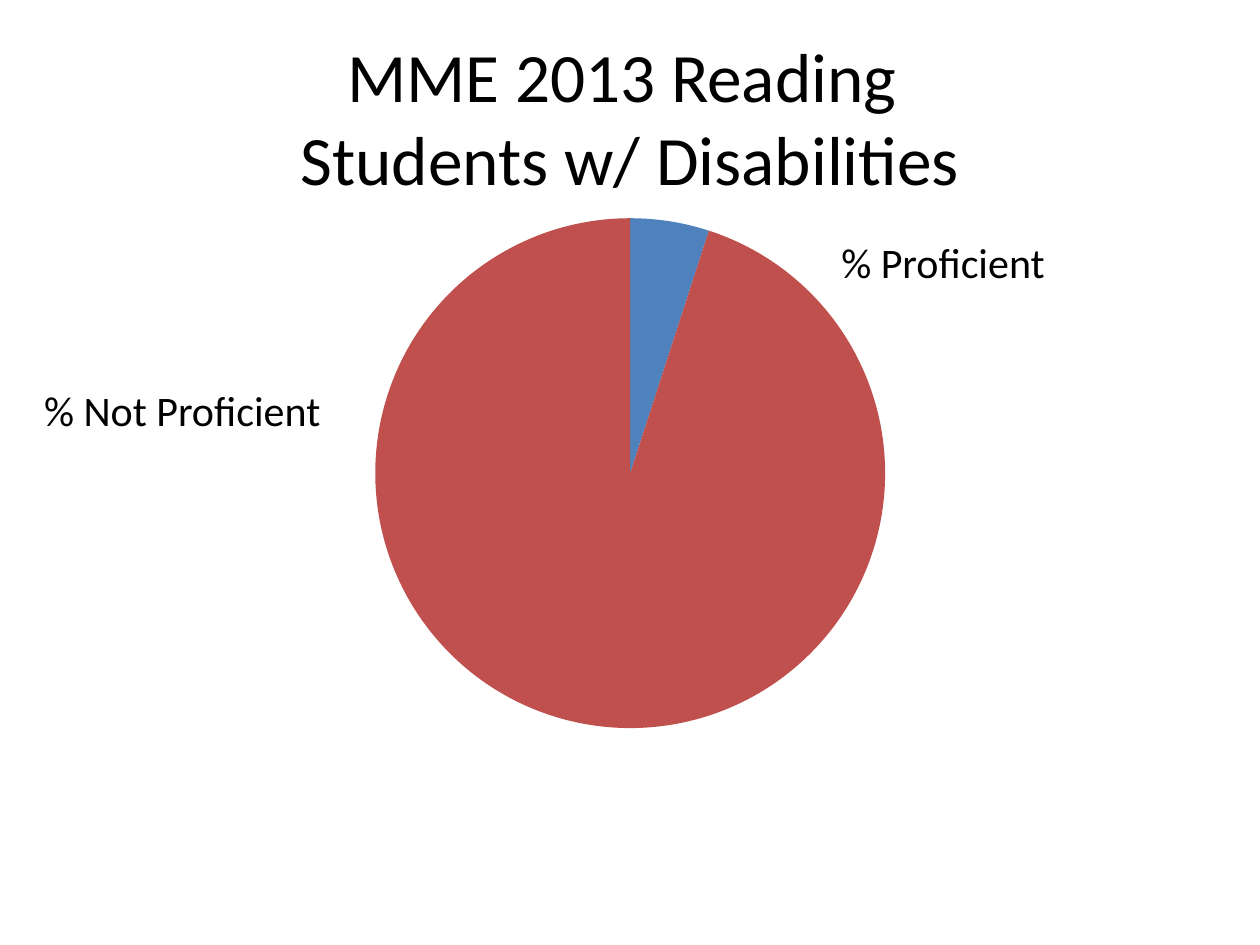
from lxml.etree import SubElement as Sub
from pptx import Presentation
from pptx.chart.data import CategoryChartData as Data
from pptx.dml.color import RGBColor as Rgb
from pptx.enum.chart import XL_CHART_TYPE as Kind
from pptx.enum.text import MSO_ANCHOR as Anchor, MSO_AUTO_SIZE as Fit, PP_ALIGN as Align
from pptx.oxml.ns import qn
from pptx.util import Cm, Pt

FONT = "Calibri"
HUES = {"text": "000000", "pass": "4F81BD", "fail": "C0504D"}
TITLE = "MME 2013 Reading \vStudents w/ Disabilities"
TITLE_BOX = (1.27, 0.76, 22.86, 3.18)
LABELS = [
    ("% Proficient", (16.71, 4.65, 7.42, 1.27)),
    ("% Not Proficient", (0.64, 7.62, 6.55, 1.27)),
]
SLICES = [("1", 5, "pass"), ("2", 95, "fail")]
CHART_BOX = (4.78, 4.04, 15.85, 11)
PIE = 10.28


def style(font, size):
    font.name, font.size = FONT, Pt(size)
    font.color.rgb = Rgb.from_string(HUES["text"])


def write(shape, text, size=24, align=Align.LEFT, anchor=Anchor.TOP, fit=Fit.NONE):
    frame = shape.text_frame
    frame.text = text
    frame.word_wrap, frame.auto_size = True, fit
    frame.vertical_anchor = anchor
    para = frame.paragraphs[0]
    para.alignment = align
    for run in para.runs:
        style(run.font, size)


def add_pie(slide):
    data = Data()
    data.categories = [name for name, _, _ in SLICES]
    data.add_series("Series 1", [val for _, val, _ in SLICES])
    box = [Cm(n) for n in CHART_BOX]
    chart = slide.shapes.add_chart(Kind.PIE, *box, data).chart
    chart.has_title = chart.has_legend = False
    style(chart.font, 10)
    plot = chart.plots[0]
    plot.vary_by_categories = True
    for i, (_, _, hue) in enumerate(SLICES):
        fill = plot.series[0].points[i].format.fill
        fill.solid()
        fill.fore_color.rgb = Rgb.from_string(HUES[hue])
    place(chart)


def place(chart):
    area = chart.element.find(".//" + qn("c:plotArea"))
    lay = area.find(qn("c:layout"))
    if lay is None:
        lay = Sub(area, qn("c:layout"))
        area.insert(0, lay)
    wide, high = (PIE / n for n in CHART_BOX[2:])
    spot = {
        "layoutTarget": "inner", "xMode": "edge", "yMode": "edge",
        "x": (1 - wide) / 2, "y": (1 - high) / 2, "w": wide, "h": high,
    }
    man = Sub(lay, qn("c:manualLayout"))
    for tag, val in spot.items():
        Sub(man, qn("c:" + tag)).set("val", str(val))


def main():
    """Build the reading proficiency slide."""
    deck = Presentation()
    deck.slide_width, deck.slide_height = Cm(25.4), Cm(19.05)
    slide = deck.slides.add_slide(deck.slide_layouts[5])
    title = slide.shapes.title
    title.left, title.top, title.width, title.height = [Cm(n) for n in TITLE_BOX]
    write(title, TITLE, size=39.6, align=Align.CENTER, anchor=Anchor.MIDDLE)
    for text, box in LABELS:
        label = slide.shapes.add_textbox(*[Cm(n) for n in box])
        write(label, text, fit=Fit.SHAPE_TO_FIT_TEXT)
    add_pie(slide)
    deck.save("out.pptx")


if __name__ == "__main__":
    main()
